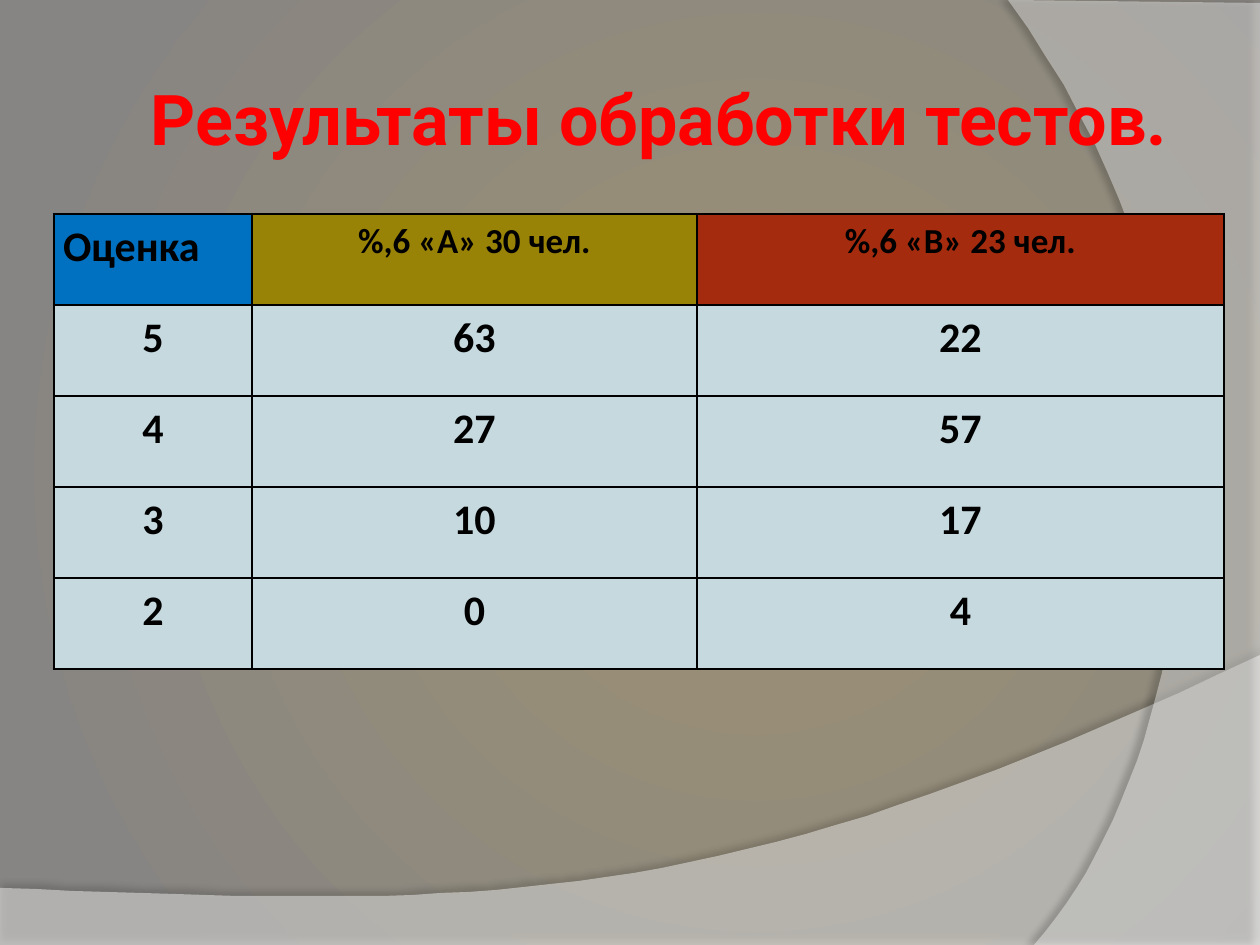
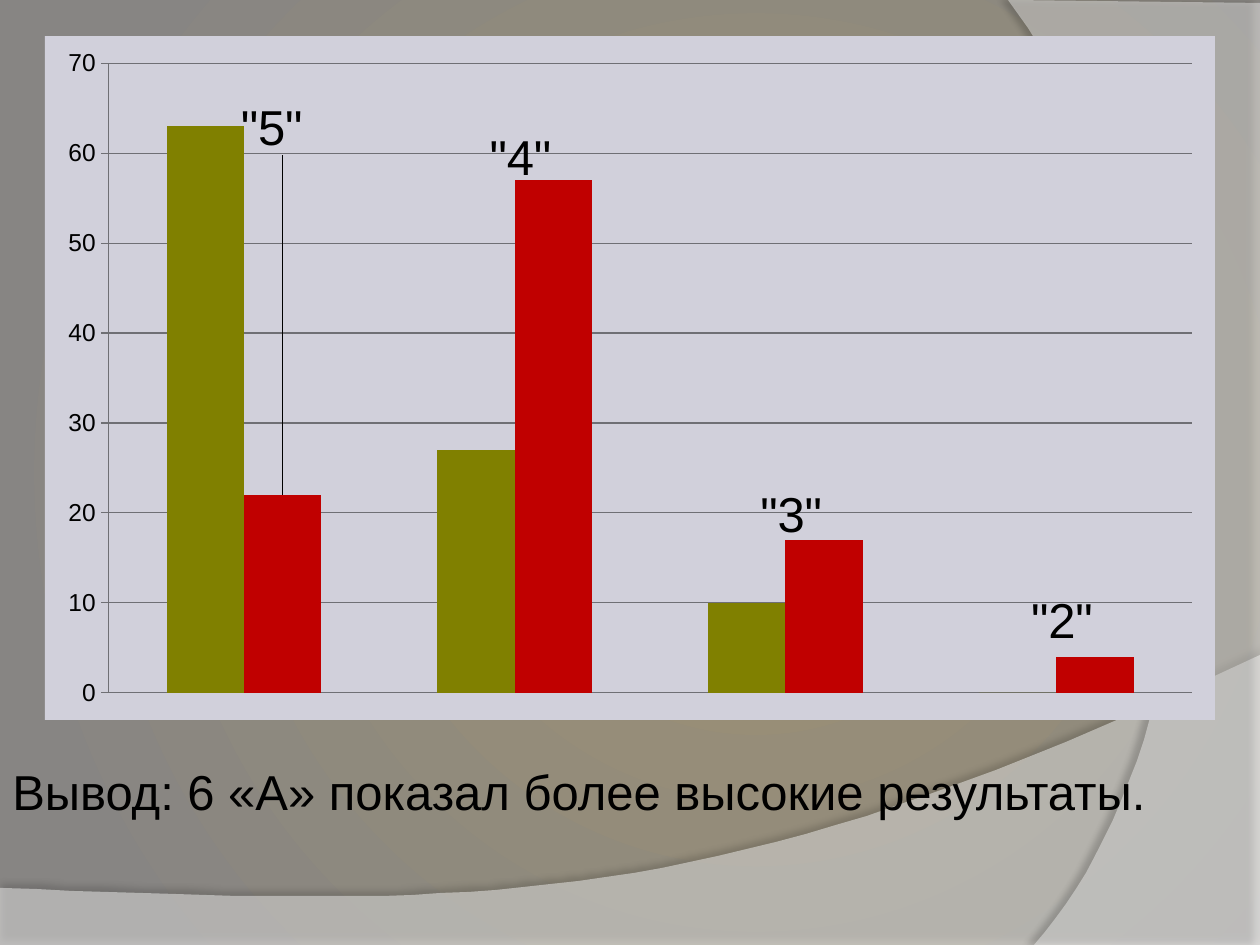
from lxml import etree
from pptx import Presentation
from pptx import util as u
from pptx.chart.data import CategoryChartData
from pptx.dml.color import RGBColor
from pptx.enum import chart as charts, text
from pptx.oxml import parse_xml
from pptx.oxml.ns import nsdecls, qn

SCALE = 914400 / 126
WIDTH, HEIGHT = 1260, 945
COLORS = {
    "glow": "9E9273", "edge": "878583", "band": "FFFFFF",
    "title": "FF0000", "text": "000000", "grade": "0070C0",
    "class_a": "998307", "class_b": "A42B0E", "cell": "C5D9DF",
    "chart": "D1D0DB", "bar_a": "808000", "bar_b": "C00000", "grid": "6F6F74",
}
GRADES = ["5", "4", "3", "2"]
CLASS_A = [63, 27, 10, 0]
CLASS_B = [22, 57, 17, 4]
LABEL_SHIFTS = [(-11, -334), (-33, 11), (-33, 8), (-33, -3)]


def px(length):
    return u.Emu(round(length * SCALE))


def box(left, top, width, height):
    return px(left), px(top), px(width), px(height)


def color(name):
    return RGBColor.from_string(COLORS[name])


def fill_solid(target, name):
    target.fill.solid()
    target.fill.fore_color.rgb = color(name)


def style_font(font, name, size, color_name, bold=False):
    font.name = name
    font.size = u.Pt(size)
    font.bold = bold
    font.color.rgb = color(color_name)


def curve(start, first, second, end, steps=40):
    for step in range(1, steps + 1):
        t = step / steps
        yield tuple(
            (1 - t) ** 3 * a + 3 * (1 - t) ** 2 * t * b + 3 * (1 - t) * t ** 2 * c + t ** 3 * d
            for a, b, c, d in zip(start, first, second, end)
        )


def set_background(master):
    fill = master.background.fill
    fill.gradient()
    for stop, name, position in zip(fill.gradient_stops, ("glow", "edge"), (0, 1)):
        stop.color.rgb = color(name)
        stop.position = position
    linear = master.element.find(".//" + qn("a:lin"))
    linear.getparent().replace(linear, parse_xml(
        f'<a:path {nsdecls("a")} path="circle">'
        '<a:fillToRect l="60000" t="50000" r="40000" b="50000"/></a:path>'
    ))


def add_band(slide, master, corners, bend, opacity, shadow_opacity, distance, direction):
    builder = slide.shapes.build_freeform(*corners[0], scale=SCALE)
    builder.add_line_segments([*corners[1:], *curve(corners[-1], *bend)], close=True)
    band = builder.convert_to_shape()
    fill_solid(band, "band")
    band.line.fill.background()
    properties = band.element.spPr
    fill_color = properties.find(qn("a:solidFill"))[0]
    etree.SubElement(fill_color, qn("a:alpha"), val=str(opacity * 1000))
    properties.append(parse_xml(
        f'<a:effectLst {nsdecls("a")}><a:outerShdw blurRad="{u.Pt(4)}" '
        f'dist="{u.Pt(distance)}" dir="{direction * 60000}" algn="ctr" rotWithShape="0">'
        f'<a:srgbClr val="{COLORS["text"]}"><a:alpha val="{shadow_opacity * 1000}"/></a:srgbClr>'
        '</a:outerShdw></a:effectLst>'
    ))
    tree = master.shapes.element
    band.element.nvSpPr.cNvPr.set("id", str(100 + len(tree)))
    tree.insert(2, band.element)


def add_bands(slide, master):
    add_band(slide, master, [(1260, 3), (1260, 945), (1034, 945)],
             [(1178, 780), (1283, 378), (1008, 0)], 40, 45, 4, 180)
    add_band(slide, master, [(0, 888), (0, 945), (1260, 945), (1260, 655)],
             [(704, 919), (493, 906), (0, 888)], 45, 35, 3.5, 270)


def set_title(slide, words):
    title = slide.shapes.title
    title.left, title.top, title.width, title.height = box(58, 66, 1202, 104)
    frame = title.text_frame
    frame.text = words
    frame.vertical_anchor = text.MSO_ANCHOR.MIDDLE
    paragraph = frame.paragraphs[0]
    paragraph.alignment = text.PP_ALIGN.CENTER
    style_font(paragraph.font, "Roboto", 40, "title", True)


def add_borders(cell):
    properties = cell._tc.get_or_add_tcPr()
    for index, side in enumerate(("lnL", "lnR", "lnT", "lnB")):
        properties.insert(index, parse_xml(
            f'<a:{side} {nsdecls("a")} w="{u.Pt(1.5)}"><a:solidFill>'
            f'<a:srgbClr val="{COLORS["text"]}"/></a:solidFill></a:{side}>'
        ))


def fill_cell(cell, words, fill, size, alignment):
    cell.text = str(words)
    cell.margin_left = cell.margin_right = px(9)
    cell.margin_top = cell.margin_bottom = 0
    fill_solid(cell, fill)
    paragraph = cell.text_frame.paragraphs[0]
    paragraph.alignment = alignment
    paragraph.line_spacing = 1.15
    style_font(paragraph.font, "Calibri", size, "text", True)
    add_borders(cell)


def add_results_table(slide):
    widths, row_height = [198, 445, 527], 91
    rows = [["Оценка", "%,6 «А» 30 чел.", "%,6 «В» 23 чел."], *zip(GRADES, CLASS_A, CLASS_B)]
    table = slide.shapes.add_table(
        len(rows), len(widths), *box(54, 214, sum(widths), row_height * len(rows))
    ).table
    for column, width in zip(table.columns, widths):
        column.width = px(width)
    header_fills = ["grade", "class_a", "class_b"]
    for row, values in enumerate(rows):
        table.rows[row].height = px(row_height)
        for column, value in enumerate(values):
            header = row == 0
            fill_cell(
                table.cell(row, column), value,
                header_fills[column] if header else "cell",
                20 if header and column else 24,
                text.PP_ALIGN.CENTER if row or column else text.PP_ALIGN.LEFT,
            )


def label_grades(chart, series, width, height):
    for index, grade in enumerate(GRADES):
        label = series.points[index].data_label
        label.text_frame.text = f'"{grade}"'
        style_font(label.text_frame.paragraphs[0].runs[0].font, "Arial", 28, "text")
        label.position = charts.XL_LABEL_POSITION.OUTSIDE_END
    for label, (x, y) in zip(chart.element.xpath(".//c:dLbl"), LABEL_SHIFTS):
        for layout in label.findall(qn("c:layout")):
            label.remove(layout)
        label.find(qn("c:idx")).addnext(parse_xml(
            f'<c:layout {nsdecls("c")}><c:manualLayout>'
            f'<c:x val="{x / width:.4f}"/><c:y val="{y / height:.4f}"/>'
            '</c:manualLayout></c:layout>'
        ))


def add_results_chart(slide):
    width, height = 1170, 684
    data = CategoryChartData()
    data.categories = ["1", "2", "3", "4"]
    data.add_series("Series 1", CLASS_A)
    data.add_series("Series 2", CLASS_B)
    chart = slide.shapes.add_chart(
        charts.XL_CHART_TYPE.COLUMN_CLUSTERED, *box(45, 36, width, height), data
    ).chart
    chart.has_legend = chart.has_title = False
    style_font(chart.font, "Arial", 10, "text")
    chart.element.find(qn("c:chart")).addnext(parse_xml(
        f'<c:spPr {nsdecls("c", "a")}><a:solidFill><a:srgbClr val="{COLORS["chart"]}"/>'
        '</a:solidFill><a:ln><a:noFill/></a:ln></c:spPr>'
    ))
    chart.category_axis.visible = False
    axis = chart.value_axis
    axis.minimum_scale, axis.maximum_scale, axis.major_unit = 0, 70, 10
    axis.major_tick_mark = charts.XL_TICK_MARK.CROSS
    style_font(axis.tick_labels.font, "Arial", 14, "text")
    for line in (axis.format.line, axis.major_gridlines.format.line):
        line.color.rgb = color("grid")
        line.width = u.Pt(0.75)
    plot = chart.plots[0]
    plot.vary_by_categories = False
    plot.gap_width, plot.overlap = 150, 0
    for series, name in zip(plot.series, ("bar_a", "bar_b")):
        fill_solid(series.format, name)
    label_grades(chart, plot.series[1], width, height)


def add_conclusion(slide, words):
    frame = slide.shapes.add_textbox(*box(0, 755, WIDTH, 72)).text_frame
    frame.word_wrap = True
    frame.text = words
    paragraph = frame.paragraphs[0]
    paragraph.alignment = text.PP_ALIGN.JUSTIFY
    style_font(paragraph.font, "Arial", 28, "text")


def main():
    presentation = Presentation()
    presentation.slide_width, presentation.slide_height = px(WIDTH), px(HEIGHT)
    master = presentation.slide_master
    set_background(master)

    table_slide = presentation.slides.add_slide(presentation.slide_layouts[5])
    add_bands(table_slide, master)
    set_title(table_slide, "Результаты обработки тестов.")
    add_results_table(table_slide)

    chart_slide = presentation.slides.add_slide(presentation.slide_layouts[6])
    add_results_chart(chart_slide)
    add_conclusion(chart_slide, "Вывод: 6 «А» показал более высокие результаты.")

    presentation.save("out.pptx")


if __name__ == "__main__":
    main()
